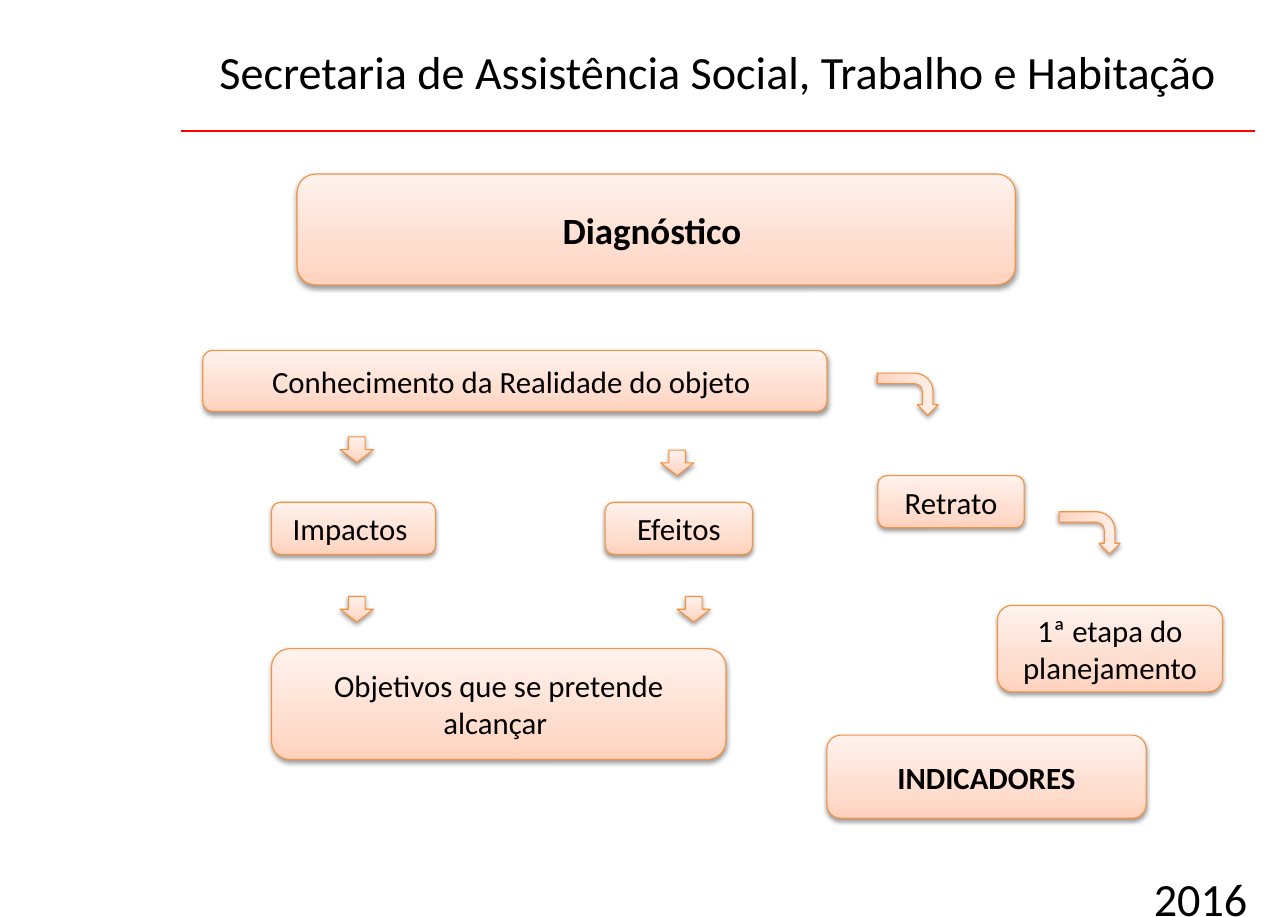
from copy import deepcopy

from lxml import etree
from pptx import Presentation
from pptx.dml.color import RGBColor
from pptx.enum.shapes import MSO_CONNECTOR, MSO_SHAPE as SHAPE
from pptx.enum.text import MSO_ANCHOR, PP_ALIGN
from pptx.oxml.ns import qn
from pptx.util import Inches, Pt

BLACK = RGBColor(0x00, 0x00, 0x00)
RED = RGBColor(0xFF, 0x00, 0x00)
ORANGE = RGBColor(0xF6, 0x92, 0x40)
PEACH_STOPS = [
    (0, RGBColor(0xFF, 0xD2, 0xBD)),
    (0.35, RGBColor(0xFF, 0xDE, 0xD0)),
    (1, RGBColor(0xFF, 0xF2, 0xED)),
]

# Content: header and year, then boxes and arrows (inches)
HEADINGS = [
    ("Secretaria de Assistência Social, Trabalho e Habitação", (1.87, 0.33, 9.42, 0.62)),
    ("2016", (10.3, 7.79, 1.3, 0.62)),
]
HEADER_RULE = (1.63, 1.18, 11.32, 1.18)

STEP = {"size": Pt(20), "bold": False}
RESULT = {"size": Pt(20), "bold": True}
TOPIC = {"size": Pt(24), "bold": True}
BOXES = [
    ("Diagnóstico ", (2.68, 1.57, 6.48, 1), TOPIC),
    ("Conhecimento da Realidade do objeto ", (1.83, 3.16, 5.63, 0.55), STEP),
    ("Impactos ", (2.45, 4.53, 1.48, 0.47), STEP),
    ("Efeitos", (5.46, 4.53, 1.33, 0.47), STEP),
    ("Objetivos que se pretende alcançar ", (2.45, 5.85, 4.1, 1), STEP),
    ("Retrato", (7.92, 4.29, 1.32, 0.47), STEP),
    ("1ª etapa do planejamento", (9, 5.46, 2.03, 0.78), STEP),
    ("INDICADORES", (7.46, 6.63, 2.88, 0.75), RESULT),
]

# Arrow kinds: preset, width, height, rotation, top-left corners
ARROWS = [
    (SHAPE.DOWN_ARROW, 0.3, 0.23, 0, [(3.07, 3.94), (5.96, 4.06), (3.07, 5.38), (6.11, 5.38)]),
    (SHAPE.BENT_ARROW, 0.38, 0.55, 90, [(8, 3.28), (9.64, 4.53)]),
]

HEADING_FONT = {"size": Pt(30), "bold": False}
HEADING_FRAME = {
    "word_wrap": True,
    "margin_left": Inches(0.11), "margin_right": Inches(0.11),
    "margin_top": Inches(0.06), "margin_bottom": Inches(0.06),
}
BOX_FRAME = {"word_wrap": True, "vertical_anchor": MSO_ANCHOR.MIDDLE}
SHADOW = {"blurRad": Pt(3.1), "dist": Pt(1.6), "dir": 90 * 60000, "rotWithShape": 0}


def set_all(target, values):
    for name, value in values.items():
        setattr(target, name, value)


def write(holder, text, frame_format, font_format, align):
    frame = holder.text_frame
    set_all(frame, frame_format)
    paragraph = frame.paragraphs[0]
    paragraph.alignment = align
    run = paragraph.add_run()
    run.text = text
    set_all(run.font, {"name": "Calibri", **font_format})
    run.font.color.rgb = BLACK


def add_peach(slide, preset, place):
    shape = slide.shapes.add_shape(preset, *map(Inches, place))
    shape.line.color.rgb = ORANGE
    shape.line.width = Pt(0.75)

    # Gradient rising from the bottom edge
    shape.fill.gradient()
    shape.fill.gradient_angle = 90
    stop_list = shape._element.spPr.find(".//" + qn("a:gsLst"))
    stop_list.append(deepcopy(stop_list[-1]))
    for stop, (position, color) in zip(shape.fill.gradient_stops, PEACH_STOPS):
        stop.position = position
        stop.color.rgb = color

    # Soft shadow below
    shape.shadow.inherit = False
    effects = shape._element.spPr.find(qn("a:effectLst"))
    outer = etree.SubElement(effects, qn("a:outerShdw"),
                             {key: str(value) for key, value in SHADOW.items()})
    shade = etree.SubElement(outer, qn("a:srgbClr"), val=str(BLACK))
    etree.SubElement(shade, qn("a:alpha"), val="38000")
    return shape


def main():
    deck = Presentation()
    deck.slide_width, deck.slide_height = Inches(11.62), Inches(8.27)
    slide = deck.slides.add_slide(deck.slide_layouts[6])

    # Header rule and headings
    rule = slide.shapes.add_connector(MSO_CONNECTOR.STRAIGHT, *map(Inches, HEADER_RULE))
    rule.line.color.rgb = RED
    rule.line.width = Pt(1.5)
    etree.SubElement(rule._element.spPr, qn("a:effectLst"))
    for text, place in HEADINGS:
        heading = slide.shapes.add_textbox(*map(Inches, place))
        write(heading, text, HEADING_FRAME, HEADING_FONT, PP_ALIGN.LEFT)

    # Boxes
    for text, place, font_format in BOXES:
        box = add_peach(slide, SHAPE.ROUNDED_RECTANGLE, place)
        write(box, text, BOX_FRAME, font_format, PP_ALIGN.CENTER)

    # Arrows
    for preset, width, height, rotation, corners in ARROWS:
        for left, top in corners:
            arrow = add_peach(slide, preset, (left, top, width, height))
            arrow.rotation = rotation

    deck.save("out.pptx")


if __name__ == "__main__":
    main()
